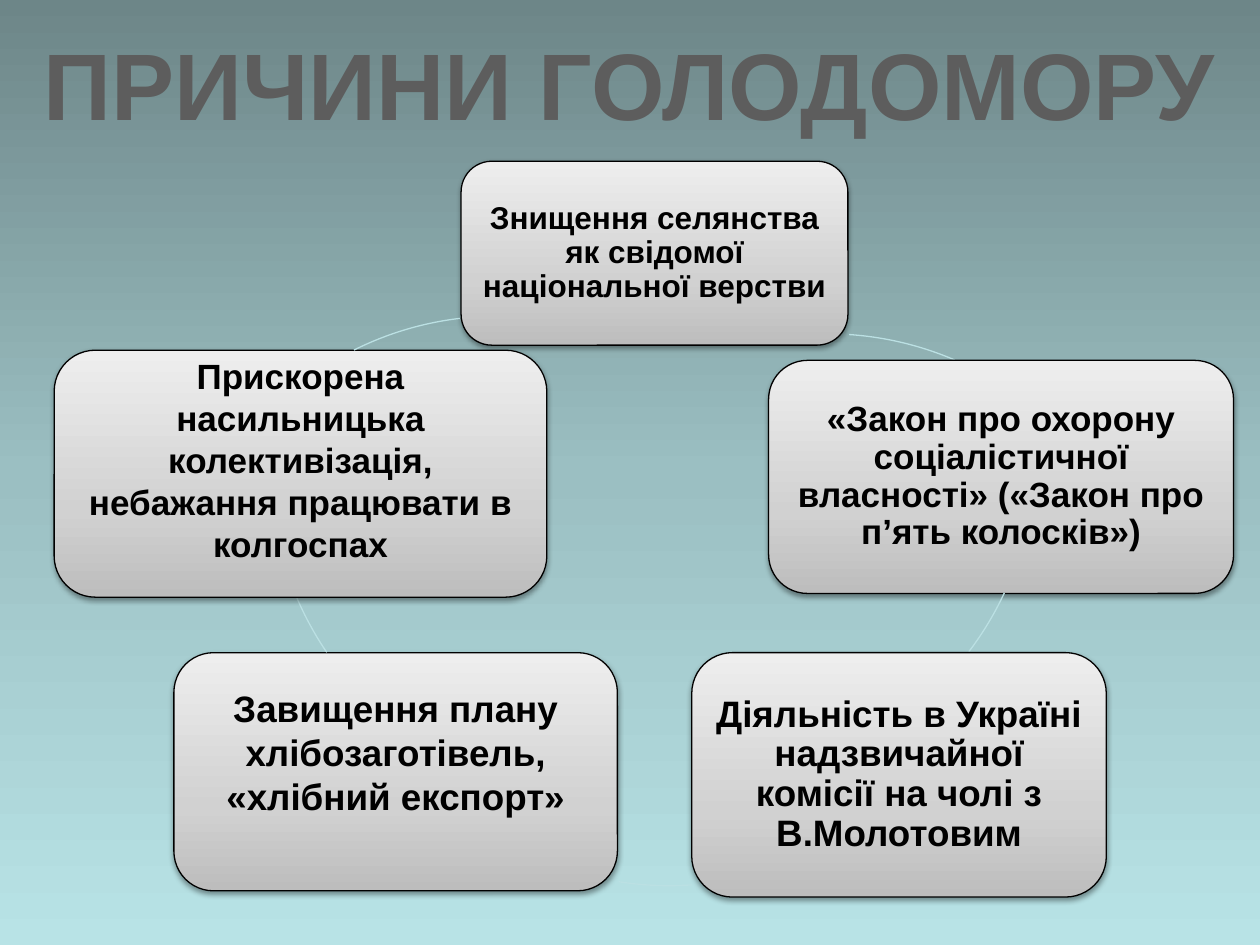
import copy
import math

import pptx
import pptx.dml.color
import pptx.enum.dml
import pptx.enum.shapes
import pptx.enum.text
import pptx.oxml
import pptx.oxml.ns
import pptx.util

RGB = pptx.dml.color.RGBColor
BLACK = RGB(0x00, 0x00, 0x00)
GREY = RGB(0x5D, 0x5D, 0x5D)
PALE = RGB(0xBB, 0xE0, 0xE3)
SKY = [(0, RGB(0x6D, 0x86, 0x88)), (0.5, RGB(0x9B, 0xBF, 0xC2)), (1, RGB(0xB8, 0xE3, 0xE6))]
STEEL = [(0, RGB(0xBD, 0xBD, 0xBD)), (0.35, RGB(0xD1, 0xD1, 0xD1)), (1, RGB(0xEE, 0xEE, 0xEE))]

WIDE, HIGH = pptx.util.Inches(10), pptx.util.Inches(7.5)
COLS, ROWS = 100, 75
RING = 51

CARDS = [
    ((36.6, 12.8, 30.7, 14.6), "Знищення селянства як свідомої національної верстви",
     dict(size=18, space=0.9)),
    ((61, 28.6, 36.9, 18.5), "«Закон про охорону соціалістичної власності» («Закон про п’ять колосків»)",
     dict(size=20, space=0.9)),
    ((54.9, 51.8, 32.9, 19.4), "Діяльність в Україні надзвичайної комісії на чолі з В.Молотовим",
     dict(size=21, space=0.9)),
    ((13.8, 51.8, 35.2, 18.9), "Завищення плану хлібозаготівель, «хлібний експорт»",
     dict(size=21, foot=3.2)),
    ((4.3, 27.8, 39.1, 19.6), "Прискорена насильницька колективізація, небажання працювати в колгоспах",
     dict(size=20, edge=0.4, foot=2.3)),
]
ARCS = [
    ((40.2, 26.5), (67.4, 26.5), (75.8, 28.5)),
    ((31.1, 10.8), (79.8, 47.1), (77, 51.8)),
    ((27.6, 19.3), (54.9, 70.3), (49.1, 70)),
    ((21.5, 11.9), (25.9, 51.8), (23.5, 47.5)),
    ((14, 25.1), (28.1, 27.8), (36.5, 25.3)),
]


def place(box):
    """Turn columns and rows into slide lengths."""
    x, y, w, h = box
    return (int(WIDE * x / COLS), int(HIGH * y / ROWS),
            int(WIDE * w / COLS), int(HIGH * h / ROWS))


def blend(fill, root, stops, angle):
    """Give a fill a three-stop gradient."""
    fill.gradient()
    fill.gradient_angle = angle
    rows = root.xpath(".//a:gsLst")[0]
    rows.append(copy.deepcopy(rows[-1]))
    for stop, (share, tint) in zip(fill.gradient_stops, stops):
        stop.position = share
        stop.color.rgb = tint


def shade(shape):
    """Drop a soft shadow straight below a shape."""
    shape.shadow.inherit = False
    drop = pptx.oxml.parse_xml(
        f'<a:outerShdw {pptx.oxml.ns.nsdecls("a")} blurRad="39400" dist="20300" '
        'dir="5400000" rotWithShape="0"><a:srgbClr val="000000">'
        '<a:alpha val="38000"/></a:srgbClr></a:outerShdw>')
    shape._element.xpath("./p:spPr/a:effectLst")[0].append(drop)


def write(frame, text, size=20, tint=BLACK, space=1.0, edge=0.8, foot=0,
          wrap=True, anchor=pptx.enum.text.MSO_ANCHOR.MIDDLE):
    """Set bold centred text in a frame."""
    frame.word_wrap = wrap
    frame.vertical_anchor = anchor
    pad = int(WIDE * edge / COLS)
    frame.margin_left = frame.margin_right = frame.margin_top = pad
    frame.margin_bottom = pad + int(HIGH * foot / ROWS)
    para = frame.paragraphs[0]
    para.alignment = pptx.enum.text.PP_ALIGN.CENTER
    para.line_spacing = space
    para.space_before = pptx.util.Pt(0)
    run = para.add_run()
    run.text = text
    run.font.name = "Arial"
    run.font.size = pptx.util.Pt(size)
    run.font.bold = True
    run.font.color.rgb = tint


def head(slide, box):
    """Place the slide title."""
    title = slide.shapes.title
    title.left, title.top, title.width, title.height = place(box)
    write(title.text_frame, "ПРИЧИНИ ГОЛОДОМОРУ", size=54, tint=GREY, edge=0.5,
          wrap=False, anchor=pptx.enum.text.MSO_ANCHOR.TOP)
    title.text_frame.auto_size = pptx.enum.text.MSO_AUTO_SIZE.SHAPE_TO_FIT_TEXT


def card(slide, box, text, style):
    """Draw one rounded cause card."""
    kind = pptx.enum.shapes.MSO_SHAPE.ROUNDED_RECTANGLE
    shape = slide.shapes.add_shape(kind, *place(box))
    blend(shape.fill, shape._element, STEEL, 90)
    shape.line.color.rgb = BLACK
    shape.line.width = pptx.util.Pt(0.75)
    shade(shape)
    write(shape.text_frame, text, **style)


def arc(slide, spot, start, end):
    """Draw the part of a ring that runs clockwise between two points."""
    kind = pptx.enum.shapes.MSO_SHAPE.ARC
    shape = slide.shapes.add_shape(kind, *place((*spot, RING, RING)))
    mid = [side + RING / 2 for side in spot]
    for i, (x, y) in enumerate((start, end)):
        turn = math.degrees(math.atan2(y - mid[1], x - mid[0])) % 360
        shape.adjustments[i] = turn * 0.6
    shape.fill.background()
    shape.line.color.rgb = PALE
    shape.line.width = pptx.util.Pt(0.75)
    shape.shadow.inherit = False


def main():
    """Build and save the slide."""
    deck = pptx.Presentation()
    deck.slide_width, deck.slide_height = WIDE, HIGH
    slide = deck.slides.add_slide(deck.slide_layouts[5])
    blend(slide.background.fill, slide._element, SKY, 270)
    for item, ring in zip(CARDS, ARCS):
        card(slide, *item)
        arc(slide, *ring)
    head(slide, (2, 1.6, 95.9, 10.1))
    deck.save("out.pptx")


if __name__ == "__main__":
    main()
